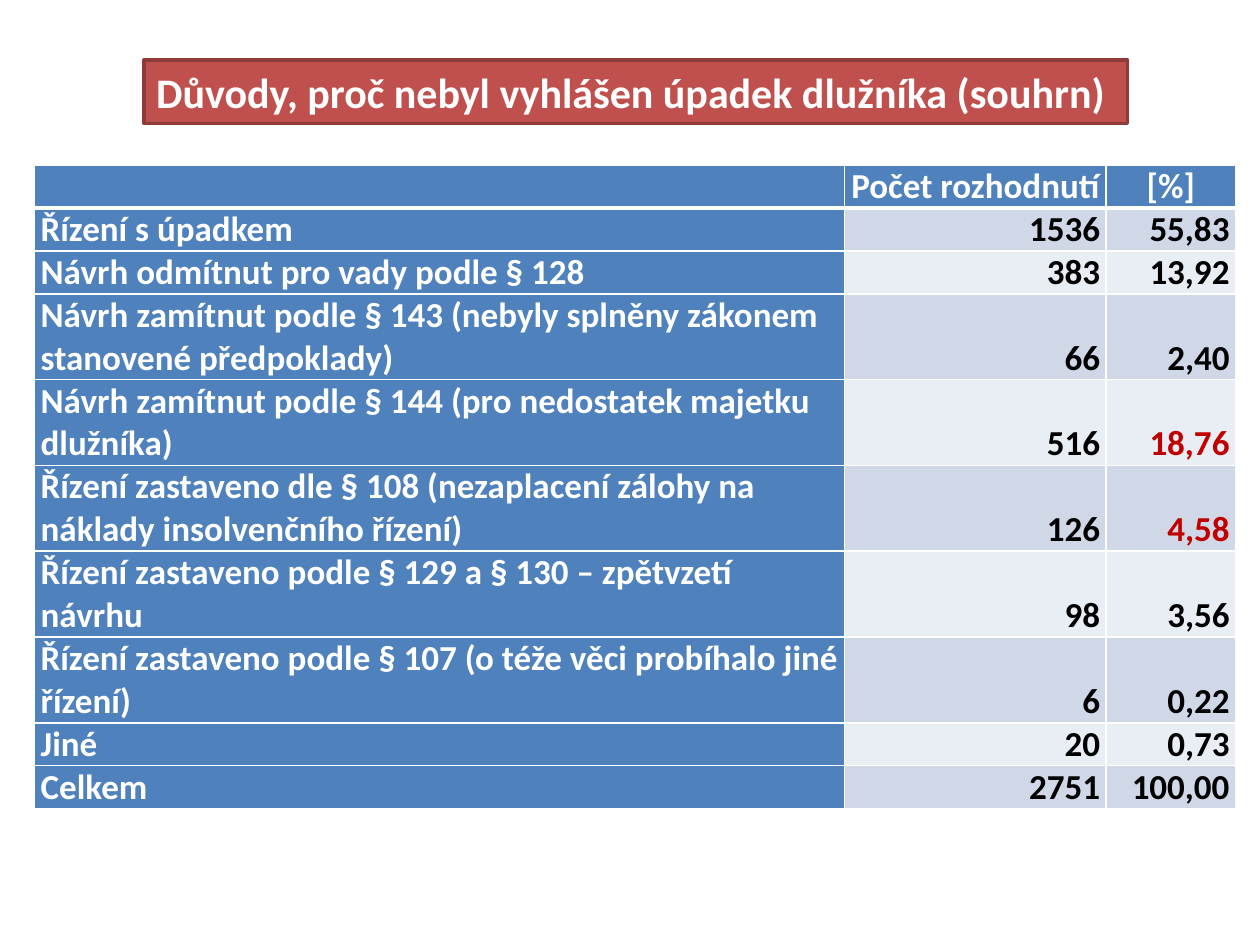
from dataclasses import dataclass

from lxml.etree import SubElement
from pptx import Presentation
from pptx.dml.color import RGBColor
from pptx.enum.shapes import MSO_SHAPE as Shape
from pptx.enum.text import MSO_ANCHOR as Anchor, MSO_AUTO_SIZE as AutoSize, PP_ALIGN as Align
from pptx.oxml.ns import qn
from pptx.util import Cm, Pt

COLORS = {
    "white": "FFFFFF",
    "black": "000000",
    "blue": "4F81BD",
    "band_dark": "D0D8E8",
    "band_light": "E9EDF4",
    "red": "C0504D",
    "red_edge": "8E3B39",
    "highlight": "C00000",
}
FONT = "Calibri"
COLUMN_WIDTHS = (16.33, 5.27, 2.61)
MINIMUM_ROW_HEIGHT = 0.53
TABLE_HEIGHT = 12.7


@dataclass(frozen=True)
class Outcome:
    reason: str
    count: str
    percent: str
    percent_color: str = "black"


OUTCOMES = [
    Outcome("Řízení s úpadkem", "1536", "55,83"),
    Outcome("Návrh odmítnut pro vady podle § 128", "383", "13,92"),
    Outcome("Návrh zamítnut podle § 143 (nebyly splněny zákonem stanovené předpoklady)",
            "66", "2,40"),
    Outcome("Návrh zamítnut podle § 144 (pro nedostatek majetku dlužníka)",
            "516", "18,76", "highlight"),
    Outcome("Řízení zastaveno dle § 108 (nezaplacení zálohy na náklady insolvenčního řízení)",
            "126", "4,58", "highlight"),
    Outcome("Řízení zastaveno podle § 129 a § 130 – zpětvzetí návrhu", "98", "3,56"),
    Outcome("Řízení zastaveno podle § 107 (o téže věci probíhalo jiné řízení)",
            "6", "0,22"),
    Outcome("Jiné", "20", "0,73"),
    Outcome("Celkem", "2751", "100,00"),
]


def rgb(color: str) -> RGBColor:
    return RGBColor.from_string(COLORS[color])


def add_run(paragraph, text: str, size: float, color: str) -> None:
    run = paragraph.add_run()
    run.text = text
    run.font.name = FONT
    run.font.size = Pt(size)
    run.font.bold = True
    run.font.color.rgb = rgb(color)


def add_borders(cell, top: float, bottom: float) -> None:
    properties = cell._tc.get_or_add_tcPr()
    sides = (("L", 1), ("R", 1), ("T", top), ("B", bottom))
    for position, (side, width) in enumerate(sides):
        border = SubElement(properties, qn(f"a:ln{side}"), w=str(Pt(width)))
        fill = SubElement(border, qn("a:solidFill"))
        SubElement(fill, qn("a:srgbClr"), val=COLORS["white"])
        properties.insert(position, border)


def fill_cell(cell, text: str, align: Align, color: str, fill: str,
              top: float = 1, bottom: float = 1) -> None:
    cell.margin_left = cell.margin_right = Cm(0.12)
    cell.margin_top = cell.margin_bottom = Cm(0)
    cell.vertical_anchor = Anchor.BOTTOM
    cell.fill.solid()
    cell.fill.fore_color.rgb = rgb(fill)
    add_borders(cell, top, bottom)
    if text:
        paragraph = cell.text_frame.paragraphs[0]
        paragraph.alignment = align
        paragraph.space_before = Pt(6)
        add_run(paragraph, text, 20, color)


def add_title(slide) -> None:
    title = slide.shapes.add_shape(Shape.RECTANGLE, Cm(2.9), Cm(1.21), Cm(19.83), Cm(1.28))
    title.shadow.inherit = False
    title.fill.solid()
    title.fill.fore_color.rgb = rgb("red")
    title.line.color.rgb = rgb("red_edge")
    title.line.width = Pt(2)
    frame = title.text_frame
    frame.word_wrap = False
    frame.auto_size = AutoSize.SHAPE_TO_FIT_TEXT
    frame.vertical_anchor = Anchor.TOP
    paragraph = frame.paragraphs[0]
    paragraph.alignment = Align.LEFT
    add_run(paragraph, "Důvody, proč nebyl vyhlášen úpadek dlužníka (souhrn)", 24, "white")


def add_outcomes(slide) -> None:
    table_frame = slide.shapes.add_table(
        len(OUTCOMES) + 1, len(COLUMN_WIDTHS), Cm(0.7), Cm(3.33),
        Cm(sum(COLUMN_WIDTHS)), Cm(TABLE_HEIGHT),
    )
    table = table_frame.table
    for column, width in zip(table.columns, COLUMN_WIDTHS):
        column.width = Cm(width)
    for row in table.rows:
        row.height = Cm(MINIMUM_ROW_HEIGHT)
    table_frame.height = Cm(TABLE_HEIGHT)

    for column, heading in enumerate(("", "Počet rozhodnutí", "[%]")):
        fill_cell(table.cell(0, column), heading, Align.CENTER, "white", "blue", bottom=3)

    for row, outcome in enumerate(OUTCOMES, start=1):
        band = "band_dark" if row % 2 else "band_light"
        top = 3 if row == 1 else 1
        entries = (
            (outcome.reason, Align.LEFT, "white", "blue"),
            (outcome.count, Align.RIGHT, "black", band),
            (outcome.percent, Align.RIGHT, outcome.percent_color, band),
        )
        for column, entry in enumerate(entries):
            fill_cell(table.cell(row, column), *entry, top=top)


def main() -> None:
    presentation = Presentation()
    presentation.slide_width = Cm(25.4)
    presentation.slide_height = Cm(19.05)
    slide = presentation.slides.add_slide(presentation.slide_layouts[6])
    add_outcomes(slide)
    add_title(slide)
    presentation.save("out.pptx")


if __name__ == "__main__":
    main()
